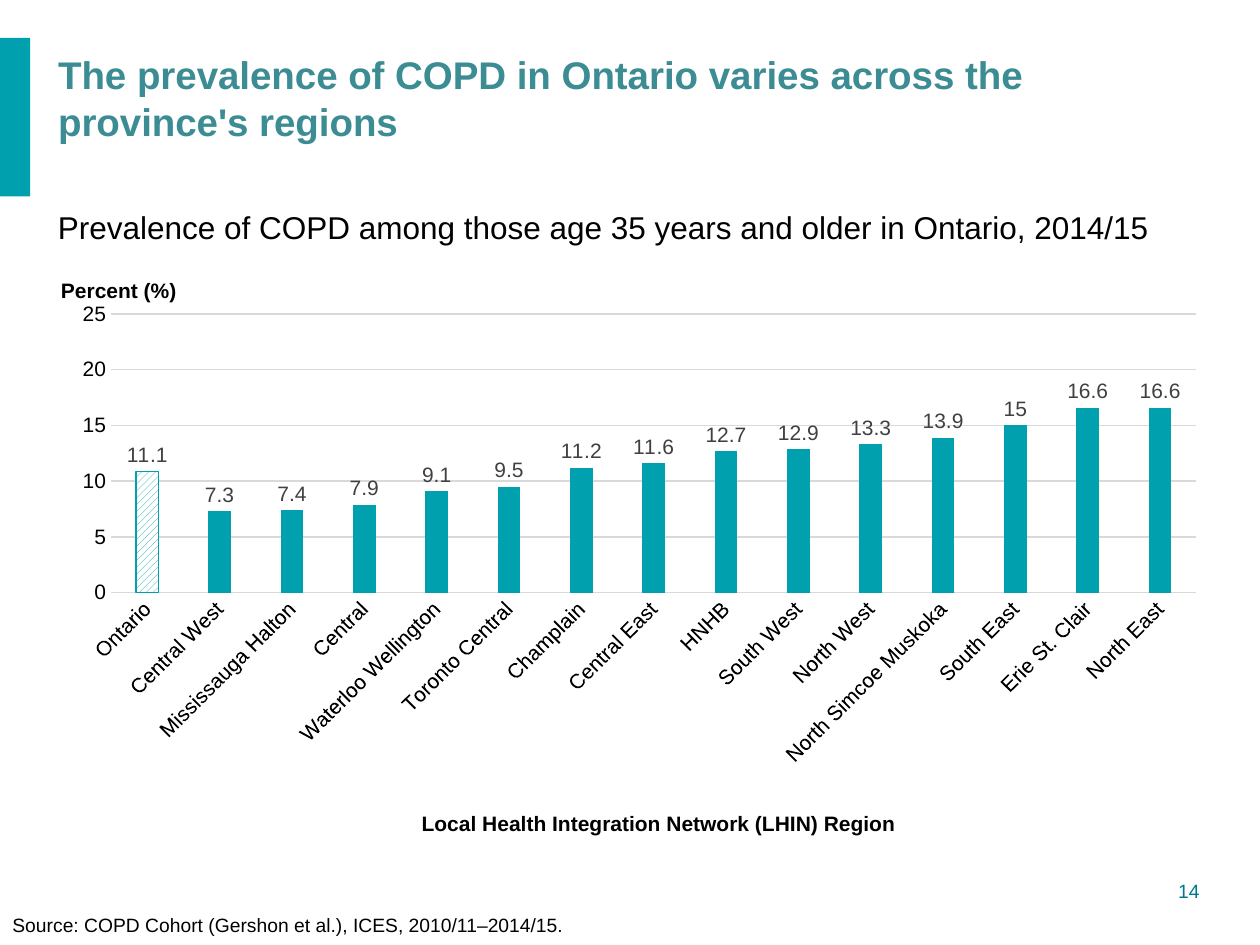
from lxml import etree
from pptx import Presentation
from pptx.chart.data import CategoryChartData
from pptx.dml.color import RGBColor
from pptx.enum import chart as chart_enum, dml, shapes, text
from pptx.oxml import ns
from pptx.util import Pt

COLORS = {
    "teal": "00A0AF", "title": "3C8C93", "number": "00788A", "label": "404040",
    "grid": "D9D9D9", "text": "000000", "white": "FFFFFF",
}
PREVALENCE = {
    "Ontario": 10.9, "Central West": 7.3, "Mississauga Halton": 7.4,
    "Central": 7.9, "Waterloo Wellington": 9.1, "Toronto Central": 9.5,
    "Champlain": 11.2, "Central East": 11.6, "HNHB": 12.7,
    "South West": 12.9, "North West": 13.3, "North Simcoe Muskoka": 13.9,
    "South East": 15, "Erie St. Clair": 16.6, "North East": 16.6,
}


def color(name):
    return RGBColor.from_string(COLORS[name])


def set_values(target, **values):
    for name, value in values.items():
        setattr(target, name, value)


def format_font(font, size, color_name="text", bold=False):
    set_values(font, name="Arial", size=Pt(size), bold=bold)
    font.color.rgb = color(color_name)


def place(shape, box):
    for side, value in zip(("left", "top", "width", "height"), box):
        setattr(shape, side, Pt(value))


def add_text(slide, box, words, size, color_name="text", wrap=True, align=text.PP_ALIGN.LEFT):
    shape = slide.shapes.add_textbox(*map(Pt, box))
    shape.text_frame.word_wrap = wrap
    paragraph = shape.text_frame.paragraphs[0]
    paragraph.text = words
    paragraph.alignment = align
    format_font(paragraph.runs[0].font, size, color_name)


def add_heading(slide, box, words):
    left, top, width, height = box
    # Accent bar at the slide edge
    bar = slide.shapes.add_shape(shapes.MSO_SHAPE.RECTANGLE, 0, Pt(top - 3.6), Pt(17.3), Pt(90.7))
    bar.shadow.inherit = False
    bar.fill.solid()
    bar.fill.fore_color.rgb = color("teal")
    bar.line.fill.background()
    # Title
    title = slide.shapes.title
    place(title, box)
    set_values(title.text_frame, text=words, word_wrap=True,
               auto_size=text.MSO_AUTO_SIZE.NONE, vertical_anchor=text.MSO_ANCHOR.MIDDLE)
    paragraph = title.text_frame.paragraphs[0]
    paragraph.alignment = text.PP_ALIGN.LEFT
    format_font(paragraph.runs[0].font, 22, "title", True)


def set_layout(element, index, **fractions):
    """Give a chart part a manual layout, as fractions of the chart."""
    for old in element.findall(ns.qn("c:layout")):
        element.remove(old)
    layout = etree.Element(ns.qn("c:layout"))
    manual = etree.SubElement(layout, ns.qn("c:manualLayout"))
    if "w" in fractions:
        etree.SubElement(manual, ns.qn("c:layoutTarget")).set("val", "inner")
    for name in ("x", "y"):
        etree.SubElement(manual, ns.qn(f"c:{name}Mode")).set("val", "edge")
    for name, value in fractions.items():
        etree.SubElement(manual, ns.qn(f"c:{name}")).set("val", str(value))
    element.insert(index, layout)


def format_axis(axis, words, x, y):
    set_values(axis, major_tick_mark=chart_enum.XL_TICK_MARK.NONE,
               minor_tick_mark=chart_enum.XL_TICK_MARK.NONE)
    format_font(axis.tick_labels.font, 12)
    frame = axis.axis_title.text_frame
    frame.text = words
    format_font(frame.paragraphs[0].runs[0].font, 12, bold=True)
    title = axis.axis_title._element
    title.find(".//" + ns.qn("a:bodyPr")).set("rot", "0")
    set_layout(title, 1, x=x, y=y)


def format_line(line):
    line.color.rgb = color("grid")
    line.width = Pt(0.75)


def add_prevalence_chart(slide, box):
    data = CategoryChartData()
    data.categories = list(PREVALENCE)
    data.add_series("Series 1", list(PREVALENCE.values()))
    chart = slide.shapes.add_chart(
        chart_enum.XL_CHART_TYPE.COLUMN_CLUSTERED, *map(Pt, box), data).chart
    set_values(chart, has_legend=False, has_title=False)
    format_font(chart.font, 12)
    set_layout(chart._chartSpace.chart.plotArea, 0, x=0.056, y=0.08, w=0.927, h=0.489)

    # Axes
    regions, percent = chart.category_axis, chart.value_axis
    format_axis(regions, "Local Health Integration Network (LHIN) Region", 0.318, 0.945)
    format_axis(percent, "Percent (%)", 0.01, 0.01)
    regions._element.find(ns.qn("c:txPr")).find(ns.qn("a:bodyPr")).set("rot", "-2700000")
    format_line(regions.format.line)
    set_values(percent, minimum_scale=0, maximum_scale=25, major_unit=5,
               has_major_gridlines=True)
    percent.format.line.fill.background()
    format_line(percent.major_gridlines.format.line)

    # Columns and their labels
    plot = chart.plots[0]
    set_values(plot, gap_width=219, overlap=-27, vary_by_categories=False)
    series = plot.series[0]
    series.format.fill.solid()
    series.format.fill.fore_color.rgb = color("teal")
    outside = chart_enum.XL_LABEL_POSITION.OUTSIDE_END
    set_values(series.data_labels, show_value=True, position=outside)
    format_font(series.data_labels.font, 12, "label")

    # Hatched column for the whole province
    province = series.points[0]
    fill = province.format.fill
    fill.patterned()
    fill.pattern = dml.MSO_PATTERN.WIDE_UPWARD_DIAGONAL
    fill.fore_color.rgb = color("teal")
    fill.back_color.rgb = color("white")
    province.format.line.color.rgb = color("teal")
    province.format.line.width = Pt(0.75)
    label = province.data_label
    label.text_frame.text = "11.1"
    format_font(label.text_frame.paragraphs[0].runs[0].font, 12, "label")
    label.position = outside


def main():
    presentation = Presentation()
    set_values(presentation, slide_width=Pt(720), slide_height=Pt(540))
    slide = presentation.slides.add_slide(presentation.slide_layouts.get_by_name("Title Only"))
    add_heading(slide, (26, 25.2, 623.5, 61.2),
                "The prevalence of COPD in Ontario varies across the province's regions")
    add_text(slide, (26, 115.2, 669, 29),
             "Prevalence of COPD among those age 35 years and older in Ontario, 2014/15", 18)
    add_prevalence_chart(slide, (26, 153.4, 669, 327.6))
    # Page number and source
    add_text(slide, (608.4, 499, 84.2, 20.6), "14", 11, "number", align=text.PP_ALIGN.RIGHT)
    add_text(slide, (0, 518.4, 334.8, 20.6),
             "Source: COPD Cohort (Gershon et al.), ICES, 2010/11–2014/15.", 11, wrap=False)
    presentation.save("out.pptx")


if __name__ == "__main__":
    main()
